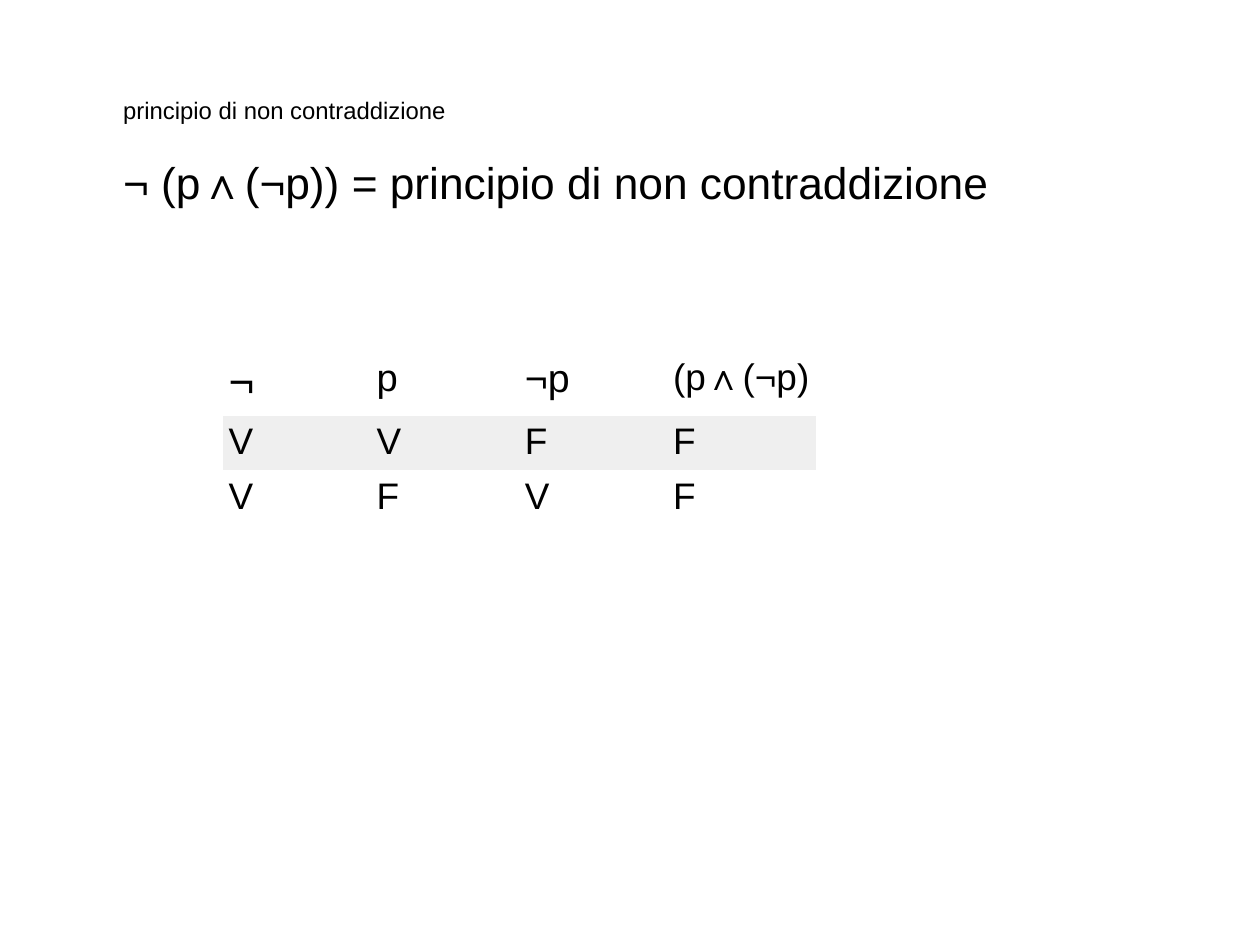
from dataclasses import dataclass

from pptx import Presentation
from pptx.dml.color import RGBColor
from pptx.enum.text import MSO_ANCHOR
from pptx.util import Pt

TOP, BOTTOM = MSO_ANCHOR.TOP, MSO_ANCHOR.BOTTOM
NO_STYLE = "{2D5ABB26-0587-4C30-8999-92F81FD0307C}"


@dataclass(frozen=True)
class Theme:
    font: str = "Arial"
    ink: RGBColor = RGBColor(0x00, 0x00, 0x00)
    band: RGBColor = RGBColor(0xEF, 0xEF, 0xEF)
    title: float = 19.4
    formula: float = 36
    value: float = 30
    heads: tuple[float, ...] = (36, 31, 32, 30)


@dataclass(frozen=True)
class Label:
    text: str
    top: float
    height: float
    size: float
    anchor: MSO_ANCHOR


THEME = Theme()
LEFT, WIDTH = 100, 824
TABLE_LEFT, TABLE_TOP = 181.5, 286
COL_WIDTH, ROW_HEIGHT, CELL_MARGIN = 120.4, 21.8, 4.3

LABELS = (
    Label("principio di non contraddizione", 43.2, 57.6, THEME.title, BOTTOM),
    Label("¬ (p∧(¬p)) = principio di non contraddizione", 126, 535.7,
          THEME.formula, TOP),
)
TRUTH_TABLE = (
    ("¬", "p", "¬p", "(p∧(¬p)"),
    ("V", "V", "F", "F"),
    ("V", "F", "V", "F"),
)


def set_margins(target, margin: float) -> None:
    for side in ("left", "top", "right", "bottom"):
        setattr(target, f"margin_{side}", Pt(margin))


def write(tf, text: str, size: float) -> None:
    r = tf.paragraphs[0].add_run()
    r.text = text
    for name, value in {"name": THEME.font, "size": Pt(size)}.items():
        setattr(r.font, name, value)
    r.font.color.rgb = THEME.ink


def add_label(s, label: Label) -> None:
    sp = s.shapes.add_textbox(Pt(LEFT), Pt(label.top), Pt(WIDTH), Pt(label.height))
    tf = sp.text_frame
    for name, value in {"word_wrap": True, "vertical_anchor": label.anchor}.items():
        setattr(tf, name, value)
    set_margins(tf, 0)
    write(tf, label.text, label.size)


def add_truth_table(s, rows: tuple[tuple[str, ...], ...]) -> None:
    n_rows, n_cols = len(rows), len(rows[0])
    table = s.shapes.add_table(
        n_rows, n_cols, Pt(TABLE_LEFT), Pt(TABLE_TOP),
        Pt(COL_WIDTH * n_cols), Pt(ROW_HEIGHT * n_rows)).table
    table.first_row = table.horz_banding = False
    table._tbl.tblPr[0].text = NO_STYLE
    for column in table.columns:
        column.width = Pt(COL_WIDTH)
    for i, row in enumerate(rows):
        table.rows[i].height = Pt(ROW_HEIGHT)
        for j, text in enumerate(row):
            cell = table.cell(i, j)
            set_margins(cell, CELL_MARGIN)
            write(cell.text_frame, text, THEME.value if i else THEME.heads[j])
            # Odd rows carry the grey band
            if i % 2:
                cell.fill.solid()
                cell.fill.fore_color.rgb = THEME.band
            else:
                cell.fill.background()


def main() -> None:
    prs = Presentation()
    prs.slide_width, prs.slide_height = Pt(1024), Pt(768)
    s = prs.slides.add_slide(prs.slide_layouts[6])

    # Title and formula
    for label in LABELS:
        add_label(s, label)

    # Truth table
    add_truth_table(s, TRUTH_TABLE)
    prs.save("out.pptx")


if __name__ == "__main__":
    main()
